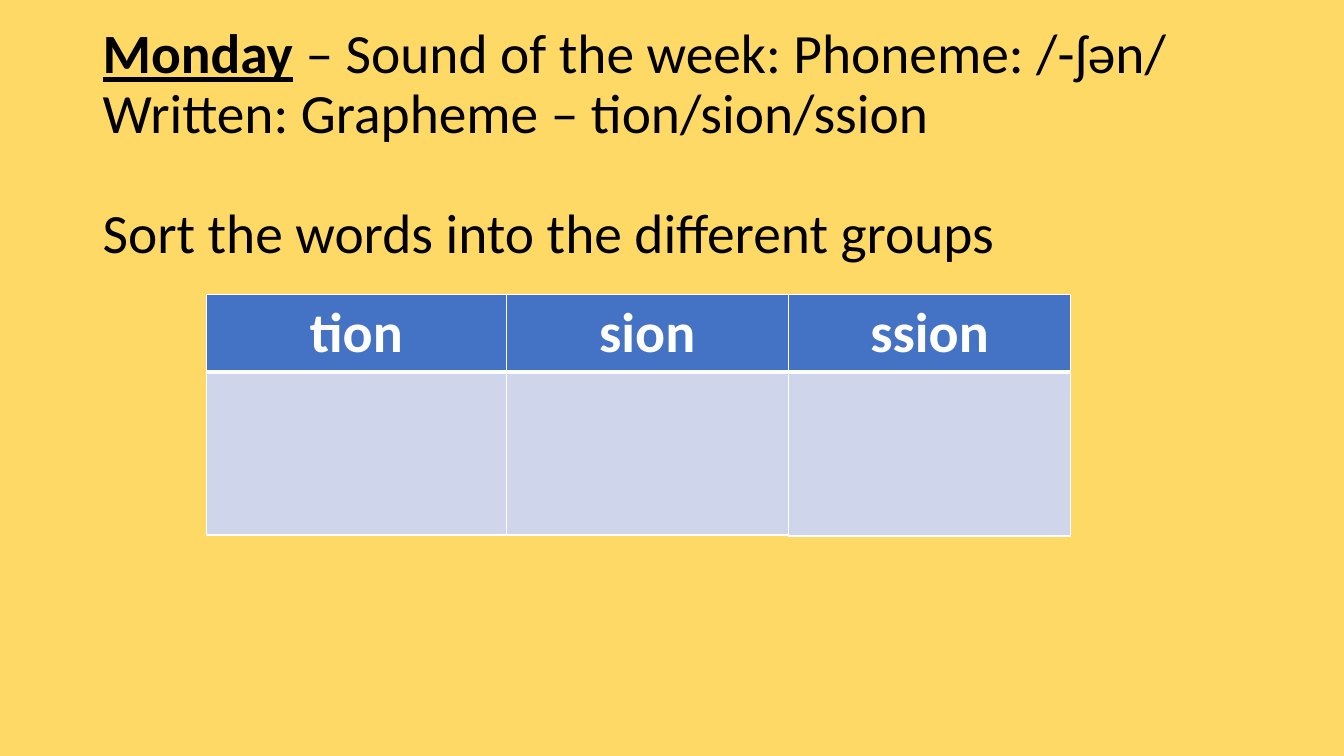
from dataclasses import dataclass

from lxml.etree import SubElement
from pptx import Presentation
from pptx.dml.color import RGBColor
from pptx.enum.text import MSO_ANCHOR, PP_ALIGN
from pptx.oxml.ns import qn
from pptx.util import Inches, Pt


@dataclass(frozen=True)
class Theme:
    font: str = "Calibri"
    background: str = "FFD966"
    text: str = "000000"
    header: str = "4472C4"
    body: str = "CFD5EA"
    light: str = "FFFFFF"
    title_size: float = 39.6
    header_size: float = 40
    thin: float = 1
    thick: float = 3


class SlideBuilder:
    def __init__(self, prs, theme):
        self.theme = theme
        self.slide = prs.slides.add_slide(prs.slide_layouts[6])
        fill = self.slide.background.fill
        fill.solid()
        fill.fore_color.rgb = RGBColor.from_string(theme.background)

    def style_run(self, r, size, color, bold=False, underline=False):
        r.font.name = self.theme.font
        r.font.size = Pt(size)
        r.font.color.rgb = RGBColor.from_string(color)
        r.font.bold = bold
        r.font.underline = underline

    def title(self, left, top, width, height, paragraphs):
        """Each paragraph is (space before in points, [(text, emphasised), ...])."""
        box = self.slide.shapes.add_textbox(
            Inches(left), Inches(top), Inches(width), Inches(height))
        tf = box.text_frame
        tf.word_wrap = True
        tf.vertical_anchor = MSO_ANCHOR.MIDDLE
        for i, (space, runs) in enumerate(paragraphs):
            p = tf.add_paragraph() if i else tf.paragraphs[0]
            p.line_spacing = 0.9
            p.space_before = Pt(space)
            for text, strong in runs:
                r = p.add_run()
                r.text = text
                self.style_run(r, self.theme.title_size, self.theme.text,
                               strong, strong)

    def cell_borders(self, cell, top, bottom):
        tc_pr = cell._tc.get_or_add_tcPr()
        thin = self.theme.thin
        for side, width in zip("LRTB", (thin, thin, top, bottom)):
            ln = SubElement(tc_pr, qn(f"a:ln{side}"), w=str(Pt(width)))
            fill = SubElement(ln, qn("a:solidFill"))
            SubElement(fill, qn("a:srgbClr"), val=self.theme.light)

    def sorting_table(self, left, top, widths, heights, headings):
        """A heading row above one row of empty cells."""
        t = self.theme
        table = self.slide.shapes.add_table(
            len(heights), len(widths), Inches(left), Inches(top),
            Inches(sum(widths)), Inches(sum(heights))).table
        table.horz_banding = False
        for row, height in zip(table.rows, heights):
            row.height = Inches(height)
        rows = ((t.header, t.thin, t.thick), (t.body, t.thick, t.thin))
        for col, (width, heading) in enumerate(zip(widths, headings)):
            table.columns[col].width = Inches(width)
            for row, (color, upper, lower) in enumerate(rows):
                cell = table.cell(row, col)
                self.cell_borders(cell, upper, lower)
                cell.fill.solid()
                cell.fill.fore_color.rgb = RGBColor.from_string(color)
            p = table.cell(0, col).text_frame.paragraphs[0]
            p.text = heading
            p.alignment = PP_ALIGN.CENTER
            self.style_run(p.runs[0], t.header_size, t.light, bold=True)


def main():
    prs = Presentation()
    prs.slide_width, prs.slide_height = Inches(13.33), Inches(7.5)
    s = SlideBuilder(prs, Theme())
    s.title(0.92, 0.72, 11.5, 1.45, [
        (0, [("Monday", True),
             (" – Sound of the week: Phoneme: /-ʃən/", False)]),
        (0, [("Written: Grapheme – tion/sion/ssion", False)]),
        (43, [("Sort the words into the different groups", False)]),
    ])
    s.sorting_table(2.05, 2.92, [2.97, 2.8], [0.76, 1.62], ["tion", "sion"])
    s.sorting_table(7.82, 2.92, [2.8], [0.76, 1.63], ["ssion"])
    prs.save("out.pptx")


if __name__ == "__main__":
    main()
